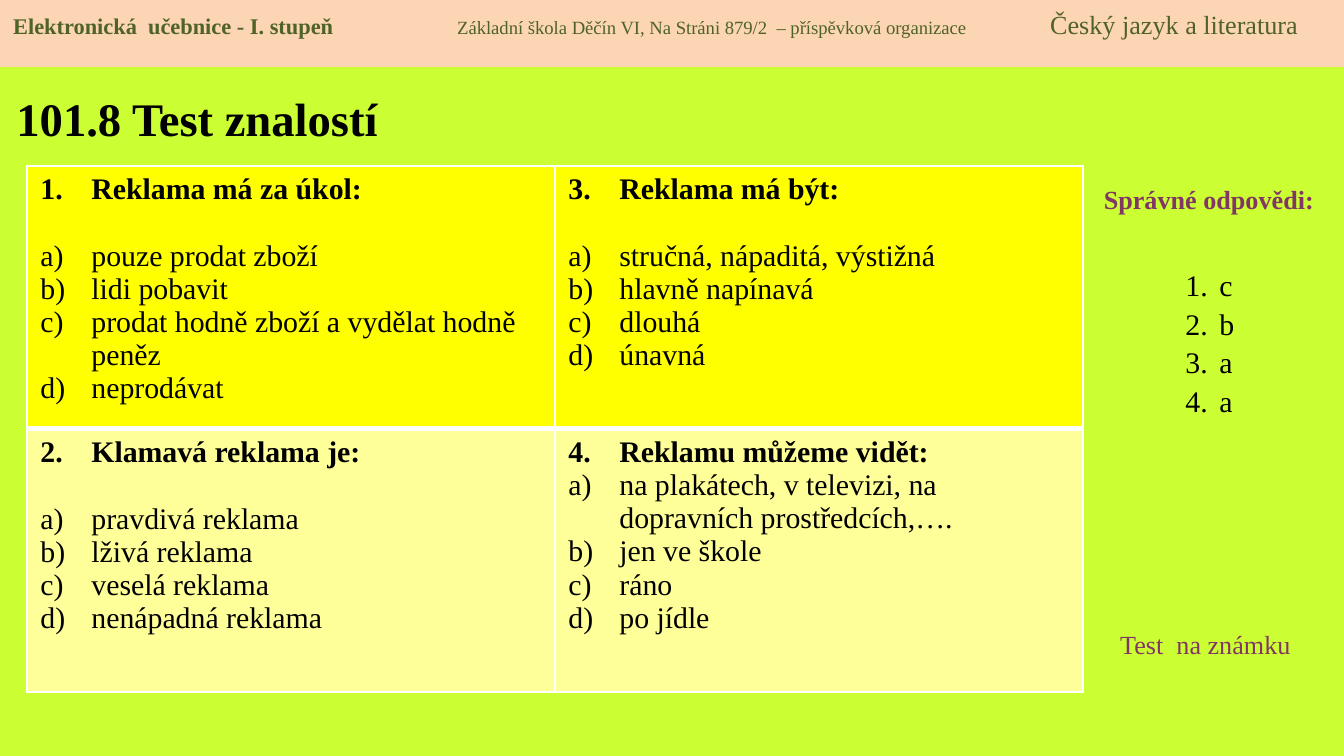
from dataclasses import dataclass

from lxml import etree
from pptx import Presentation
from pptx.dml.color import RGBColor
from pptx.enum.shapes import MSO_SHAPE
from pptx.enum.text import MSO_ANCHOR, MSO_AUTO_SIZE, PP_ALIGN
from pptx.oxml.ns import qn
from pptx.util import Emu, Pt

RECTANGLE = MSO_SHAPE.RECTANGLE
TOP, MIDDLE = MSO_ANCHOR.TOP, MSO_ANCHOR.MIDDLE
LEFT, CENTER = PP_ALIGN.LEFT, PP_ALIGN.CENTER
NO_AUTOFIT = MSO_AUTO_SIZE.NONE
EMU_PER_PX = 914400 / 134.4


@dataclass(frozen=True)
class Theme:
    font: str = "Times New Roman"
    page: str = "CCFF33"
    banner: str = "FCD5B5"
    banner_text: str = "4F6228"
    ink: str = "000000"
    accent: str = "813763"
    border: str = "FFFFFF"
    row_fills: tuple = ("FFFF00", "FFFF99")
    title_size: int = 25
    body_size: int = 16
    label_size: int = 14
    school_size: int = 10
    series_size: int = 12


THEME = Theme()

# Question number, question, gap after it in points, answers
QUESTIONS = [
    [
        (1, "Reklama má za úkol:", 18,
         ["pouze prodat zboží", "lidi pobavit",
          "prodat hodně zboží a vydělat hodně peněz", "neprodávat"]),
        (3, "Reklama má být:", 18,
         ["stručná, nápaditá, výstižná", "hlavně napínavá", "dlouhá", "únavná"]),
    ],
    [
        (2, "Klamavá reklama je:", 18,
         ["pravdivá reklama", "lživá reklama", "veselá reklama",
          "nenápadná reklama"]),
        (4, "Reklamu můžeme vidět:", 0,
         ["na plakátech, v televizi, na\ndopravních prostředcích,….",
          "jen ve škole", "ráno", "po jídle"]),
    ],
]


def px(length):
    return Emu(round(length * EMU_PER_PX))


def area(left, top, width, height):
    return [px(length) for length in (left, top, width, height)]


def write(para, text, size=THEME.body_size, bold=False, color=THEME.ink):
    """Add text to a paragraph; a newline becomes a line break."""
    for index, line in enumerate(text.split("\n")):
        if index:
            para.add_line_break()
        span = para.add_run()
        span.text = line
        span.font.name = THEME.font
        span.font.size = Pt(size)
        span.font.bold = bold
        span.font.color.rgb = RGBColor.from_string(color)


def next_para(frame, is_first):
    return frame.paragraphs[0] if is_first else frame.add_paragraph()


def number(para, style, indent, start=1):
    """Give a paragraph automatic numbering with a hanging indent."""
    properties = para._p.get_or_add_pPr()
    properties.set("marL", str(px(indent)))
    properties.set("indent", str(-px(indent)))
    etree.SubElement(properties, qn("a:buFont"), typeface=THEME.font)
    bullet = etree.SubElement(properties, qn("a:buAutoNum"), type=style)
    if start > 1:
        bullet.set("startAt", str(start))


def add_tabs(para, stops):
    tabs = etree.SubElement(para._p.get_or_add_pPr(), qn("a:tabLst"))
    for stop in stops:
        etree.SubElement(tabs, qn("a:tab"), pos=str(px(stop)), algn="l")


def place(placeholder, bounds, anchor):
    placeholder.left, placeholder.top, placeholder.width, placeholder.height = area(*bounds)
    frame = placeholder.text_frame
    frame.word_wrap = True
    frame.auto_size = NO_AUTOFIT
    frame.vertical_anchor = anchor
    return frame


def add_label(page, bounds, text, align=LEFT, bold=False):
    frame = page.shapes.add_textbox(*area(*bounds)).text_frame
    frame.word_wrap = True
    para = frame.paragraphs[0]
    para.alignment = align
    write(para, text, size=THEME.label_size, bold=bold, color=THEME.accent)


def add_banner(page):
    box = page.shapes.add_shape(RECTANGLE, *area(0, 0, 1344, 67))
    box.shadow.inherit = False
    box.fill.solid()
    box.fill.fore_color.rgb = RGBColor.from_string(THEME.banner)
    box.line.fill.background()
    frame = box.text_frame
    frame.vertical_anchor = TOP
    frame.margin_top = px(8)
    para = frame.paragraphs[0]
    para.alignment = LEFT
    add_tabs(para, (444, 1037))
    color = THEME.banner_text
    write(para, "Elektronická  učebnice - I. stupeň\t",
          size=THEME.series_size, bold=True, color=color)
    write(para, "Základní škola Děčín VI, Na Stráni 879/2  – příspěvková organizace\t",
          size=THEME.school_size, color=color)
    write(para, "Český jazyk a literatura", size=THEME.label_size, color=color)


def set_borders(cell, widths):
    properties = cell._tc.get_or_add_tcPr()
    for side, width in widths.items():
        line = etree.SubElement(properties, qn(f"a:ln{side}"), w=str(Pt(width)))
        fill = etree.SubElement(line, qn("a:solidFill"))
        etree.SubElement(fill, qn("a:srgbClr"), val=THEME.border)


def fill_question(cell, question):
    start, heading, gap, answers = question
    frame = cell.text_frame
    para = frame.paragraphs[0]
    number(para, "arabicPeriod", 51, start)
    para.space_after = Pt(gap)
    write(para, heading, bold=True)
    for answer in answers:
        para = frame.add_paragraph()
        number(para, "alphaLcParenR", 51)
        write(para, answer)


def add_questions(page):
    table = page.shapes.add_table(2, 2, *area(27, 166, 1056, 526)).table
    for row_index, row in enumerate(QUESTIONS):
        widths = {"L": 1, "R": 1, "T": 3 if row_index else 1, "B": 1 if row_index else 3}
        for column_index, question in enumerate(row):
            cell = table.cell(row_index, column_index)
            set_borders(cell, widths)
            cell.fill.solid()
            cell.fill.fore_color.rgb = RGBColor.from_string(THEME.row_fills[row_index])
            fill_question(cell, question)


def fill_answers(placeholder, answers):
    frame = place(placeholder, (1172, 222, 74, 267), TOP)
    frame.margin_top = px(45)
    for index, answer in enumerate(answers):
        para = next_para(frame, index == 0)
        number(para, "arabicPeriod", 34)
        para.space_before = Pt(0)
        para.space_after = Pt(1.4)
        write(para, answer)


def main():
    deck = Presentation()
    deck.slide_width, deck.slide_height = px(1344), px(756)
    page = deck.slides.add_slide(deck.slide_layouts[1])
    page.background.fill.solid()
    page.background.fill.fore_color.rgb = RGBColor.from_string(THEME.page)

    # Title
    title = place(page.shapes.title, (3, 74, 429, 87), MIDDLE).paragraphs[0]
    title.alignment = LEFT
    write(title, "101.8 Test znalostí", size=THEME.title_size, bold=True)

    # Questions
    add_questions(page)

    # Answer key
    add_label(page, (1082, 177, 254, 46), "Správné odpovědi:", align=CENTER, bold=True)
    fill_answers(page.placeholders[1], "cbaa")
    add_label(page, (1107, 622, 211, 46), "Test  na známku")

    # Banner
    add_banner(page)
    deck.save("out.pptx")


if __name__ == "__main__":
    main()
